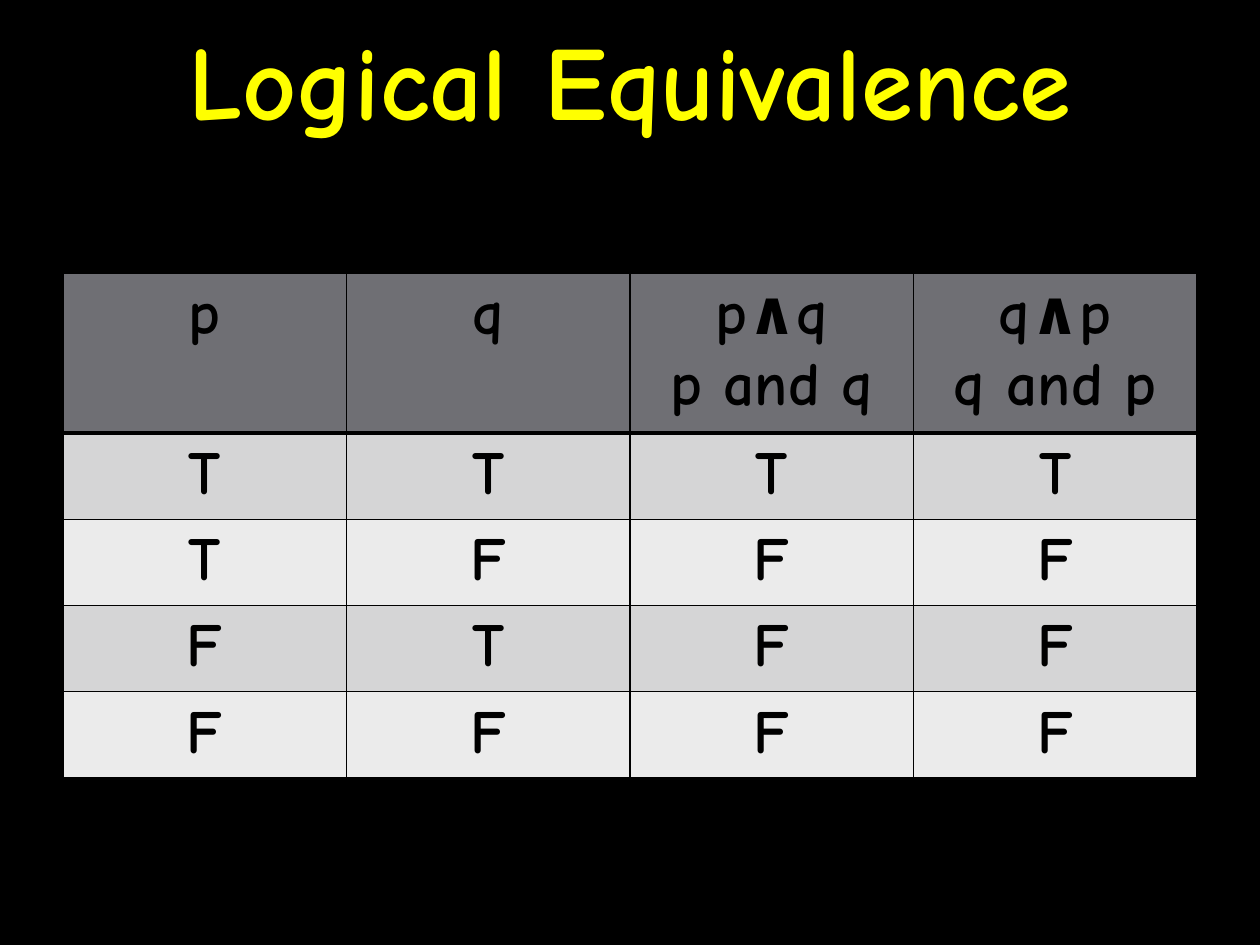
from itertools import product

from lxml.etree import SubElement as Sub
from pptx import Presentation
from pptx.dml.color import RGBColor as RGB
from pptx.enum.text import MSO_ANCHOR as Anchor, PP_ALIGN as Align
from pptx.oxml.ns import qn
from pptx.util import Inches, Pt

FONT = "Comic Neue"
HUES = {
    "back": "000000",
    "title": "FFFF00",
    "text": "000000",
    "rule": "000000",
    "head": "6F6F74",
    "odd": "D5D5D6",
    "even": "EBEBEB",
}
HEADS = ["p", "q", "p∧q\np and q", "q∧p\nq and p"]


def hue(name):
    """Return the named colour."""
    return RGB.from_string(HUES[name])


def write(frame, text, size, name):
    """Fill a text frame with centred bold lines."""
    frame.text = text
    for para in frame.paragraphs:
        para.alignment = Align.CENTER
        font = para.font
        font.name, font.size, font.bold = FONT, Pt(size), True
        font.color.rgb = hue(name)


def edge(cell, side, width):
    """Draw one border of a table cell."""
    props = cell._tc.get_or_add_tcPr()
    line = Sub(props, qn(f"a:ln{side}"), w=str(Pt(width)))
    fill = Sub(line, qn("a:solidFill"))
    Sub(fill, qn("a:srgbClr"), val=HUES["rule"])


def add_title(slide, text, left, top, width, height):
    """Place the slide title in its box."""
    box = slide.shapes.add_textbox(left, top, width, height)
    frame = box.text_frame
    frame.word_wrap = True
    frame.vertical_anchor = Anchor.MIDDLE
    write(frame, text, 60, "title")


def add_truth(slide, left, top, width, head, step):
    """Place the truth table, working out each conjunction."""
    rows = [HEADS]
    for p, q in product((True, False), repeat=2):
        rows.append(["T" if v else "F" for v in (p, q, p and q, q and p)])
    height = head + step * (len(rows) - 1)
    shape = slide.shapes.add_table(len(rows), len(HEADS), left, top, width, height)
    table = shape.table
    for r, row in enumerate(rows):
        table.rows[r].height = step if r else head
        shade = ("even", "odd")[r % 2] if r else "head"
        for c, text in enumerate(row):
            cell = table.cell(r, c)
            write(cell.text_frame, text, 35, "text")
            for side in "LRTB":
                thick = (r, side) in ((0, "B"), (1, "T"))
                edge(cell, side, 3 if thick else 1)
            cell.fill.solid()
            cell.fill.fore_color.rgb = hue(shade)


def main():
    """Build and save the slide."""
    deck = Presentation()
    deck.slide_width, deck.slide_height = Inches(10), Inches(7.5)
    slide = deck.slides.add_slide(deck.slide_layouts[6])
    back = slide.background.fill
    back.solid()
    back.fore_color.rgb = hue("back")
    add_title(slide, "Logical Equivalence", 0, 0, Inches(10), Inches(1.25))
    add_truth(slide, Inches(0.5), Inches(2.17), Inches(9), Inches(1.21), Inches(0.66))
    deck.save("out.pptx")


if __name__ == "__main__":
    main()
